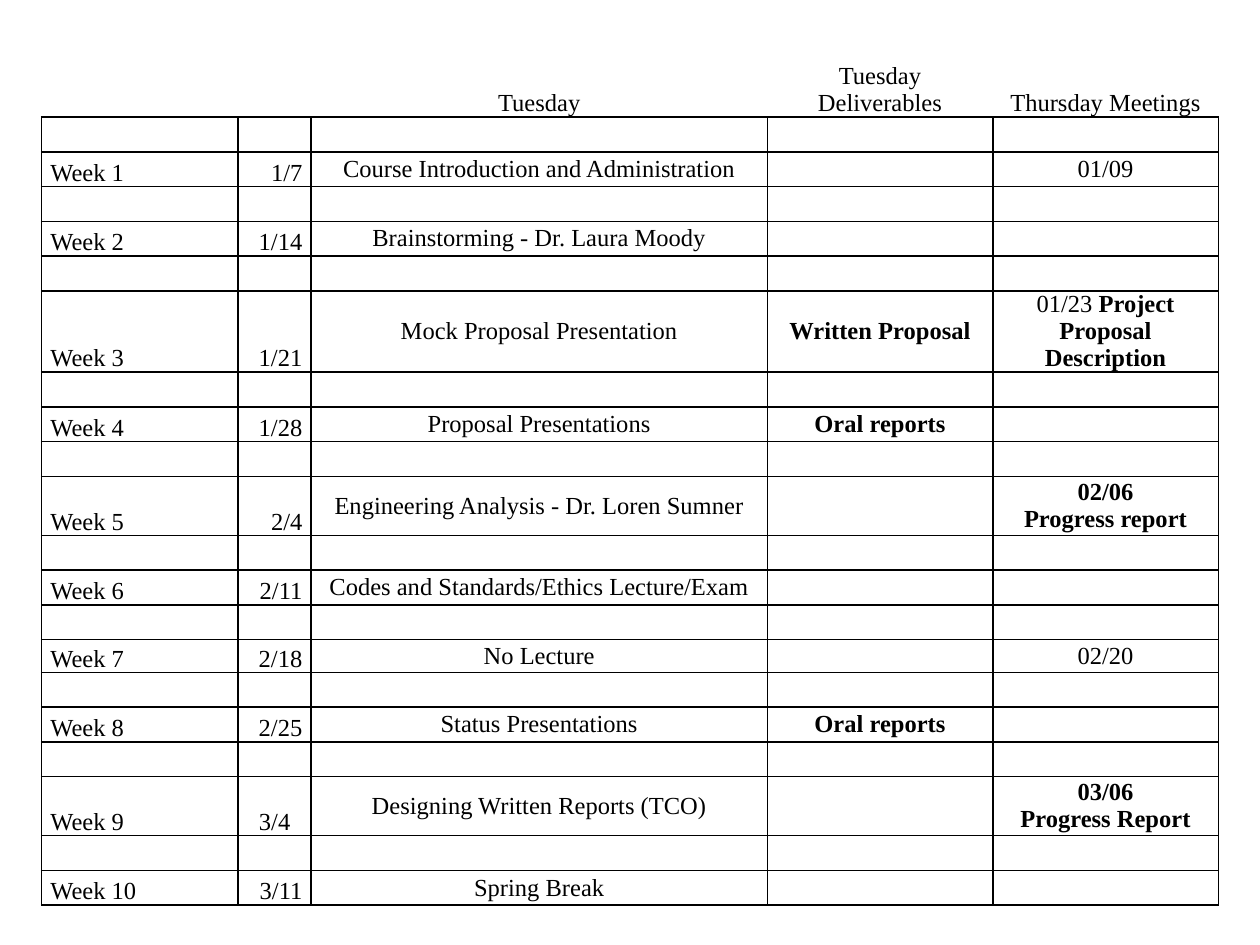
from lxml import etree
from pptx import Presentation
from pptx.dml.color import RGBColor
from pptx.enum.text import MSO_ANCHOR, PP_ALIGN
from pptx.oxml.ns import qn
from pptx.util import Inches, Pt

LEFT, CENTER, RIGHT = PP_ALIGN.LEFT, PP_ALIGN.CENTER, PP_ALIGN.RIGHT
BOTTOM, MIDDLE = MSO_ANCHOR.BOTTOM, MSO_ANCHOR.MIDDLE

FONT_NAME = "Times New Roman"
FONT_SIZE = 14
BLACK = "000000"

HEADERS = ["", "", "Tuesday", "Tuesday Deliverables", "Thursday Meetings"]
# week, date, lecture, deliverable, plain meeting text, bold meeting lines
WEEKS = [
    ("Week 1", "1/7", "Course Introduction and Administration", "", "01/09", []),
    ("Week 2", "1/14", "Brainstorming - Dr. Laura Moody", "", "", []),
    ("Week 3", "1/21", "Mock Proposal Presentation", "Written Proposal",
     "01/23 ", ["Project Proposal Description"]),
    ("Week 4", "1/28", "Proposal Presentations", "Oral reports", "", []),
    ("Week 5", "2/4", "Engineering Analysis - Dr. Loren Sumner", "",
     "", ["02/06", "Progress report"]),
    ("Week 6", "2/11", "Codes and Standards/Ethics Lecture/Exam", "", "", []),
    ("Week 7", "2/18", "No Lecture", "", "02/20", []),
    ("Week 8", "2/25", "Status Presentations", "Oral reports", "", []),
    ("Week 9", "3/4", "Designing Written Reports (TCO)", "",
     "", ["03/06", "Progress Report"]),
    ("Week 10", "3/11", "Spring Break", "", "", []),
]
CENTERED_DATES = {"3/4"}

TABLE_LEFT, TABLE_TOP = 0.33, 0.42
COLUMN_WIDTHS = [1.56, 0.58, 3.62, 1.79, 1.79]
HEADER_HEIGHT = 0.51
SPECIAL_HEIGHTS = {"Week 3": 0.64, "Week 5": 0.47, "Week 7": 0.26, "Week 9": 0.47}
REGULAR_TOTAL = 4.41
REGULAR_HEIGHT = REGULAR_TOTAL / (2 * len(WEEKS) - len(SPECIAL_HEIGHTS))


def color(value):
    return RGBColor.from_string(value)


def set_borders(cell, visible_sides):
    properties = cell._tc.get_or_add_tcPr()
    for position, side in enumerate("LRTB"):
        line = etree.Element(qn(f"a:ln{side}"), w=str(Pt(1)))
        if side in visible_sides:
            fill = etree.SubElement(line, qn("a:solidFill"))
            etree.SubElement(fill, qn("a:srgbClr"), val=BLACK)
        else:
            etree.SubElement(line, qn("a:noFill"))
        properties.insert(position, line)


def fill_cell(cell, paragraphs, alignment, anchor):
    cell.vertical_anchor = anchor
    for index, runs in enumerate(paragraphs):
        frame = cell.text_frame
        paragraph = frame.paragraphs[0] if index == 0 else frame.add_paragraph()
        paragraph.alignment = alignment
        paragraph.font.name = FONT_NAME
        paragraph.font.size = Pt(FONT_SIZE)
        paragraph.font.color.rgb = color(BLACK)
        for text, bold in runs:
            run = paragraph.add_run()
            run.text = text
            run.font.bold = bold


def meeting_paragraphs(plain, bold_lines):
    paragraphs = [[(line, True)] for line in bold_lines] or [[]]
    if plain:
        paragraphs[0].insert(0, (plain, False))
    return paragraphs


def single(text, bold=False):
    return [[(text, bold)]] if text else []


def main():
    presentation = Presentation()
    presentation.slide_width, presentation.slide_height = Inches(10), Inches(7.5)
    slide = presentation.slides.add_slide(presentation.slide_layouts[6])

    heights = [HEADER_HEIGHT]
    for week in WEEKS:
        heights += [REGULAR_HEIGHT, SPECIAL_HEIGHTS.get(week[0], REGULAR_HEIGHT)]

    table = slide.shapes.add_table(
        len(heights), len(COLUMN_WIDTHS), Inches(TABLE_LEFT), Inches(TABLE_TOP),
        Inches(sum(COLUMN_WIDTHS)), Inches(sum(heights))).table
    table.first_row = table.horz_banding = False
    for column, width in zip(table.columns, COLUMN_WIDTHS):
        column.width = Inches(width)

    for row_index, (row, height) in enumerate(zip(table.rows, heights)):
        row.height = Inches(height)
        for cell in row.cells:
            cell.margin_left = cell.margin_right = Inches(0.07)
            cell.margin_top = cell.margin_bottom = 0
            cell.fill.background()
            set_borders(cell, "LRTB" if row_index else "B")
            end_properties = cell.text_frame.paragraphs[0]._p.get_or_add_endParaRPr()
            end_properties.set("sz", str(FONT_SIZE * 100))

    for column, header in enumerate(HEADERS):
        fill_cell(table.cell(0, column), single(header), CENTER, BOTTOM)

    for index, (week, date, lecture, deliverable, plain, bold_lines) in enumerate(WEEKS):
        date_alignment = CENTER if date in CENTERED_DATES else RIGHT
        contents = [
            (single(week), LEFT, BOTTOM),
            (single(date), date_alignment, BOTTOM),
            (single(lecture), CENTER, MIDDLE),
            (single(deliverable, True), CENTER, MIDDLE),
            (meeting_paragraphs(plain, bold_lines), CENTER, MIDDLE),
        ]
        for column, content in enumerate(contents):
            fill_cell(table.cell(2 * index + 2, column), *content)

    presentation.save("out.pptx")


if __name__ == "__main__":
    main()
